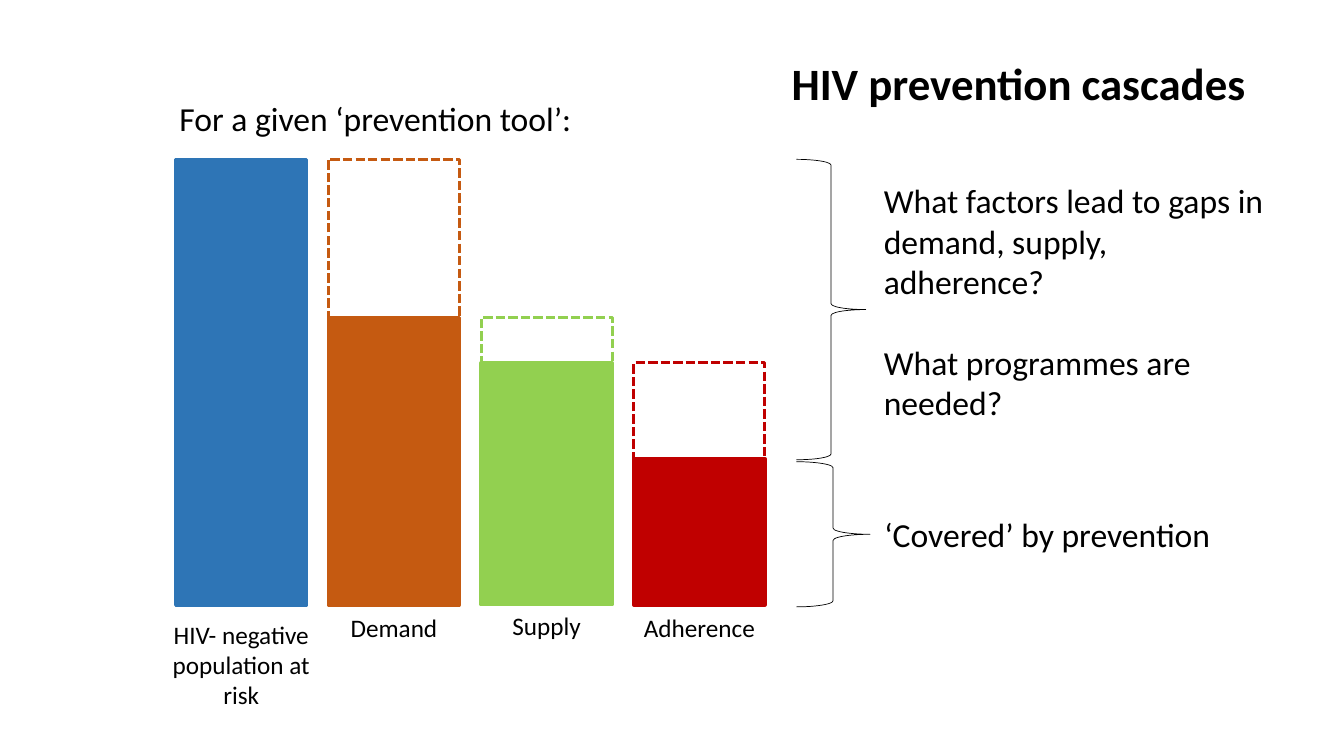
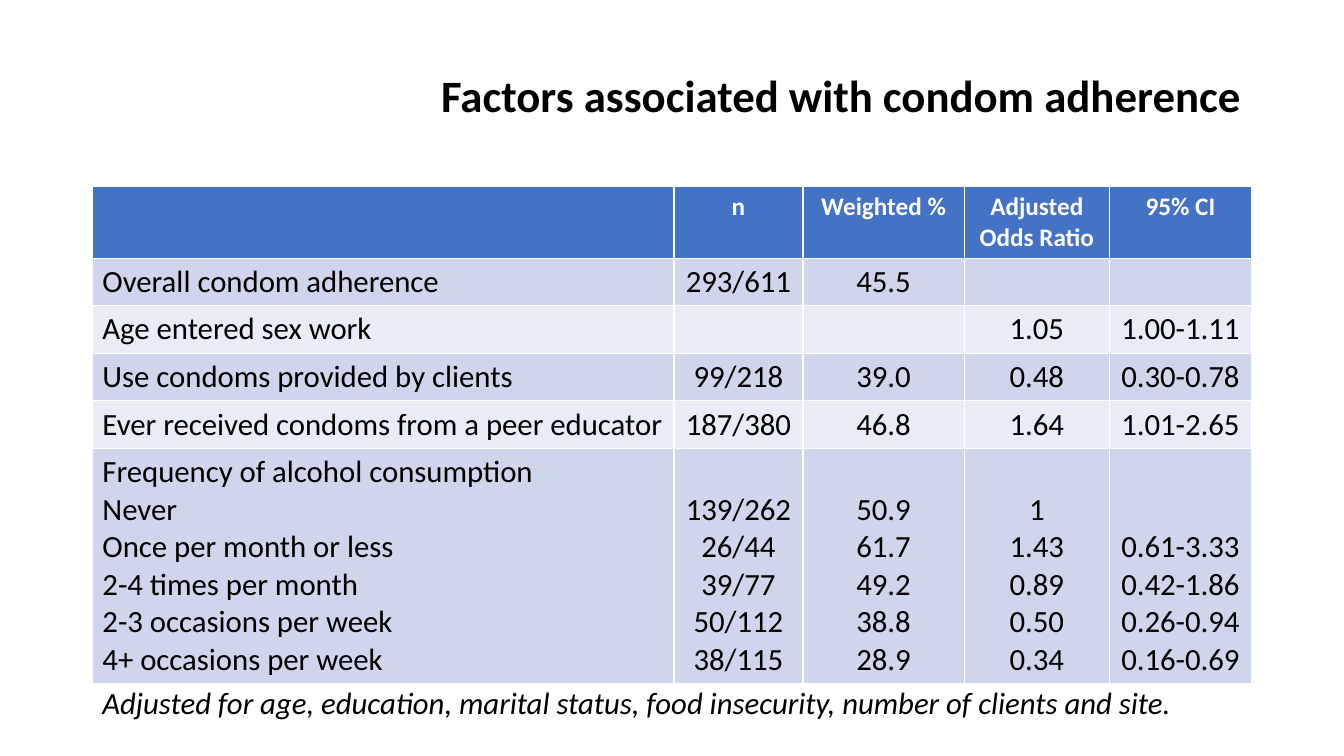
from pptx import Presentation
from pptx.dml.color import RGBColor
from pptx.enum.dml import MSO_LINE
from pptx.enum.shapes import MSO_SHAPE
from pptx.enum.text import MSO_ANCHOR, PP_ALIGN
from pptx.util import Pt

FONT = "Calibri"
COLORS = {
    "text": "000000", "white": "FFFFFF",
    "population": "2E75B6", "demand": "C55A11", "supply": "92D050", "adherence": "C00000",
    "header": "4472C4", "band_dark": "CFD5EA", "band_light": "E9EBF5",
}

# label, colour, top of the bar, outline width, top of the label
CASCADE = [
    ("HIV- negative population at risk", "population", 113.8, 2.5, 438.5),
    ("Demand", "demand", 226.8, 2.5, 433.5),
    ("Supply", "supply", 259.2, 2.5, 432.5),
    ("Adherence", "adherence", 327.6, 2.75, 433.5),
]
BAR_LEFT, BAR_PITCH, BAR_WIDTH, BASELINE = 125.5, 109.1, 93.6, 432
LABEL_WIDTH = 118.8
BRACES = [(568.8, 113.8, 49.7, 214.6), (568.8, 329.8, 52.6, 103.7)]
QUESTIONS = [
    "What factors lead to gaps in demand, supply, adherence?",
    "What programmes are needed?",
]

COLUMN_WIDTHS = [415.4, 92.2, 115.2, 103.7, 101.5]
ROW_HEIGHTS = [50.5, 34, 34, 34, 34, 167.5]
HEADER = ["", "n", "Weighted %", "Adjusted Odds Ratio", "95% CI"]
FACTORS = [
    ["Overall condom adherence", "293/611", "45.5", "", ""],
    ["Age entered sex work", "", "", "1.05", "1.00-1.11"],
    ["Use condoms provided by clients", "99/218", "39.0", "0.48", "0.30-0.78"],
    ["Ever received condoms from a peer educator", "187/380", "46.8", "1.64", "1.01-2.65"],
    [
        ["Frequency of alcohol consumption", "Never", "Once per month or less",
         "2-4 times per month", "2-3 occasions per week", "4+ occasions per week"],
        ["139/262", "26/44", "39/77", "50/112", "38/115"],
        ["50.9", "61.7", "49.2", "38.8", "28.9"],
        ["1", "1.43", "0.89", "0.50", "0.34"],
        ["0.61-3.33", "0.42-1.86", "0.26-0.94", "0.16-0.69"],
    ],
]


def rgb(name):
    return RGBColor.from_string(COLORS[name])


def points(*lengths):
    return [Pt(length) for length in lengths]


def write(frame, text, size=24, color="text", bold=False, italic=False,
          align=PP_ALIGN.LEFT, line_spacing=None, space_after=None):
    """Fill a text frame with one string, or with a list of paragraphs."""
    frame.word_wrap = True
    for index, line in enumerate([text] if isinstance(text, str) else text):
        paragraph = frame.add_paragraph() if index else frame.paragraphs[0]
        paragraph.alignment = align
        paragraph.line_spacing = line_spacing
        if space_after:
            paragraph.space_after = Pt(space_after)
        if line:
            run = paragraph.add_run()
            run.text = line
            font = run.font
            font.name, font.size, font.bold, font.italic = FONT, Pt(size), bold, italic
            font.color.rgb = rgb(color)


def add_text(slide, box, text, **style):
    write(slide.shapes.add_textbox(*points(*box)).text_frame, text, **style)


def add_titled_slide(deck, title, left, top):
    slide = deck.slides.add_slide(deck.slide_layouts[5])
    heading = slide.shapes.title
    heading.left, heading.top, heading.width, heading.height = points(left, top, 828, 104.4)
    heading.text_frame.vertical_anchor = MSO_ANCHOR.MIDDLE
    write(heading.text_frame, title, size=32, bold=True, align=PP_ALIGN.RIGHT, line_spacing=0.9)
    return slide


def add_outline(slide, kind, box, color, weight, filled=False, dash=None):
    shape = slide.shapes.add_shape(kind, *points(*box))
    shape.shadow.inherit = False
    if filled:
        shape.fill.solid()
        shape.fill.fore_color.rgb = rgb(color)
    else:
        shape.fill.background()
    shape.line.color.rgb = rgb(color)
    shape.line.width = Pt(weight)
    if dash:
        shape.line.dash_style = dash


def build_cascade(deck):
    slide = add_titled_slide(deck, "HIV prevention cascades", 69, 9.4)
    add_text(slide, (121, 66.2, 442.8, 36), "For a given ‘prevention tool’:")

    previous_top = None
    for index, (label, color, top, weight, label_top) in enumerate(CASCADE):
        left = BAR_LEFT + index * BAR_PITCH
        if previous_top is not None:
            add_outline(slide, MSO_SHAPE.RECTANGLE,
                        (left, previous_top, BAR_WIDTH, top - previous_top),
                        color, 2.25, dash=MSO_LINE.SQUARE_DOT)
        add_outline(slide, MSO_SHAPE.RECTANGLE, (left, top, BAR_WIDTH, BASELINE - top),
                    color, weight, filled=True)
        label_left = left + (BAR_WIDTH - LABEL_WIDTH) / 2
        add_text(slide, (label_left, label_top, LABEL_WIDTH, 29), label,
                 size=18, align=PP_ALIGN.CENTER)
        previous_top = top

    for brace in BRACES:
        add_outline(slide, MSO_SHAPE.RIGHT_BRACE, brace, "text", 0.5)
    add_text(slide, (624.2, 125.3, 291.6, 181.4), QUESTIONS, space_after=29)
    add_text(slide, (580.3, 363.6, 335.5, 36), "‘Covered’ by prevention", align=PP_ALIGN.CENTER)


def build_factors(deck):
    slide = add_titled_slide(deck, "Factors associated with condom adherence", 66, 18)
    rows = [HEADER] + FACTORS
    box = (66, 133.2, sum(COLUMN_WIDTHS), sum(ROW_HEIGHTS))
    table = slide.shapes.add_table(len(rows), len(HEADER), *points(*box)).table
    for column, width in zip(table.columns, COLUMN_WIDTHS):
        column.width = Pt(width)
    for row, height in zip(table.rows, ROW_HEIGHTS):
        row.height = Pt(height)

    for row_index, row in enumerate(rows):
        is_header = row_index == 0
        band = "header" if is_header else "band_dark" if row_index % 2 else "band_light"
        for column_index, content in enumerate(row):
            cell = table.cell(row_index, column_index)
            cell.fill.solid()
            cell.fill.fore_color.rgb = rgb(band)
            # Shorter lists line up with the last categories.
            if isinstance(content, list):
                cell.vertical_anchor = MSO_ANCHOR.BOTTOM
            write(cell.text_frame, content, size=18 if is_header else 22, bold=is_header,
                  color="white" if is_header else "text",
                  align=PP_ALIGN.CENTER if column_index else PP_ALIGN.LEFT)

    add_text(slide, (66, 484.6, 828, 55),
             "Adjusted for age, education, marital status, food insecurity, "
             "number of clients and site.", size=22, italic=True)


def main():
    deck = Presentation()
    deck.slide_width, deck.slide_height = points(960, 540)
    build_cascade(deck)
    build_factors(deck)
    deck.save("out.pptx")


if __name__ == "__main__":
    main()
